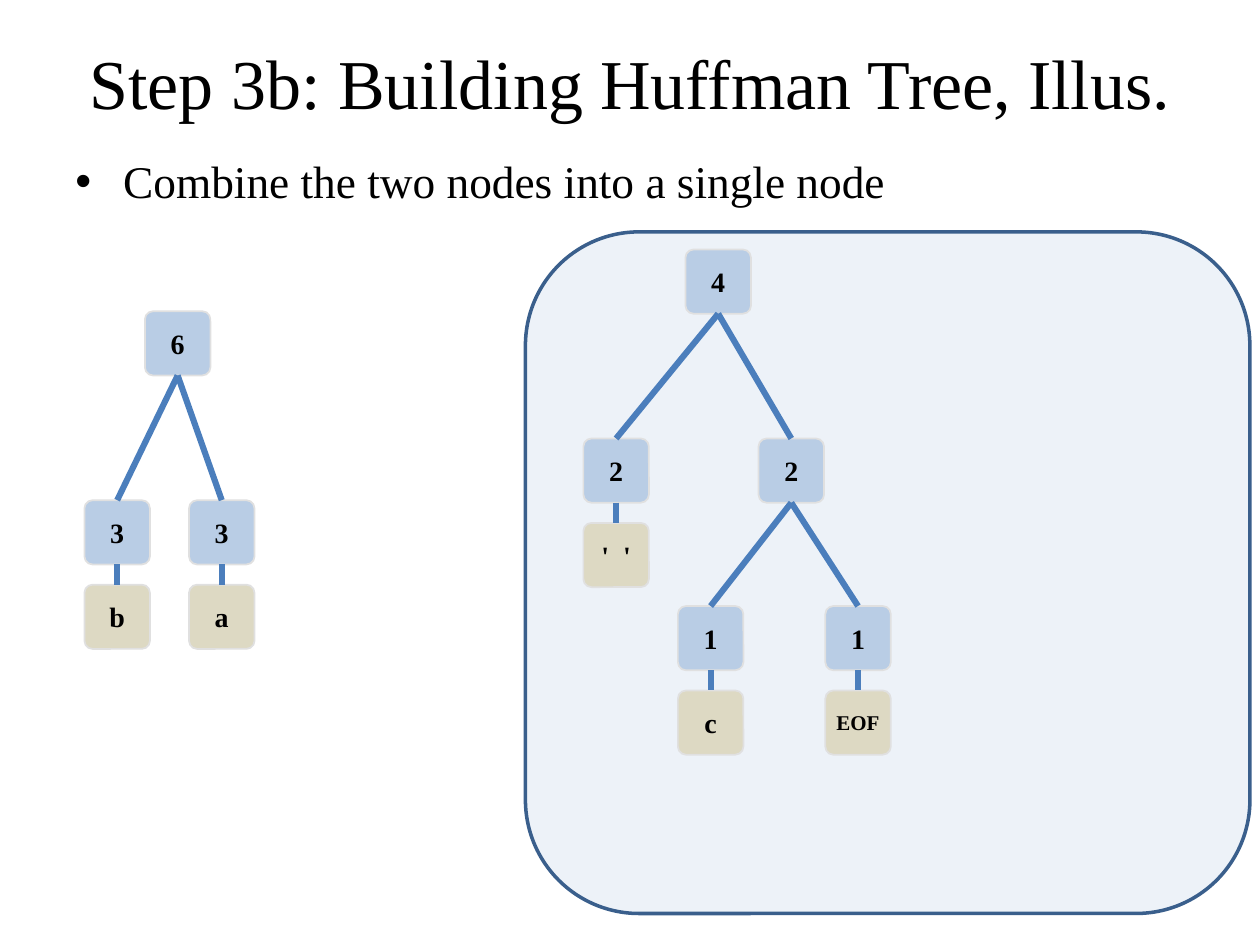
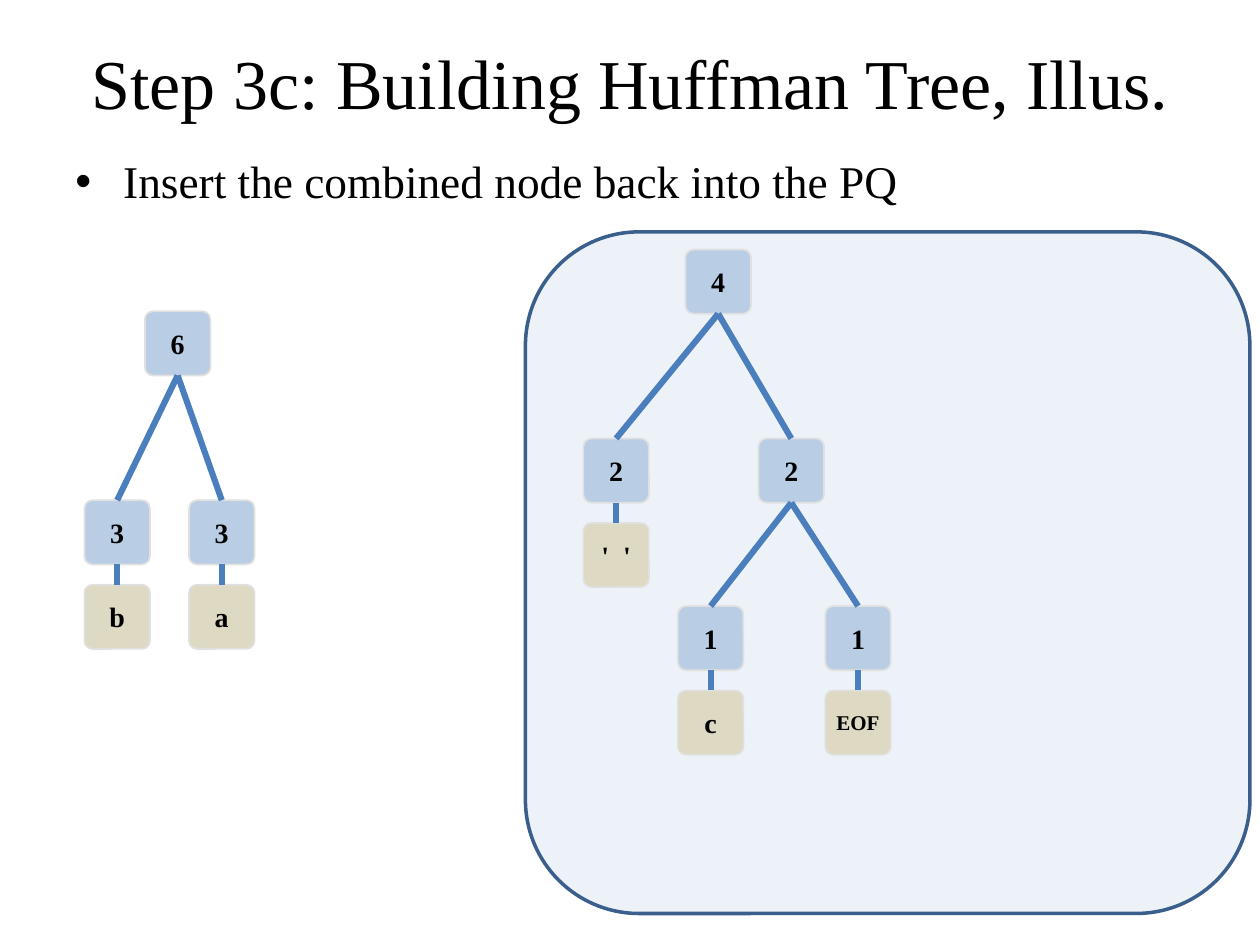
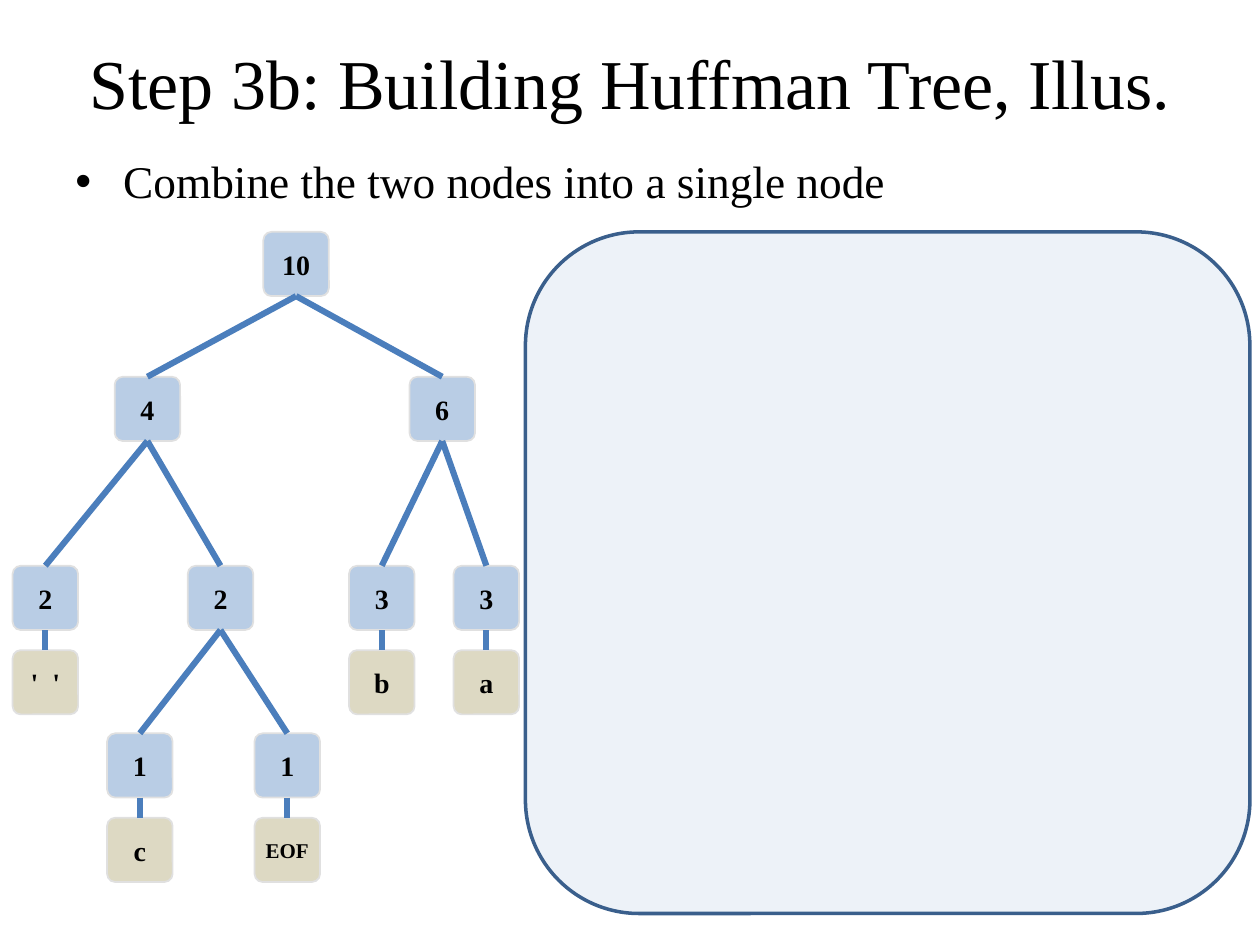
import pptx
import pptx.dml.color
import pptx.enum.shapes
import pptx.enum.text
import pptx.oxml.ns
import pptx.oxml.xmlchemy
import pptx.util

Inches = pptx.util.Inches
Pt = pptx.util.Pt
RGBColor = pptx.dml.color.RGBColor
MSO_SHAPE = pptx.enum.shapes.MSO_SHAPE
MSO_ANCHOR = pptx.enum.text.MSO_ANCHOR
PP_ALIGN = pptx.enum.text.PP_ALIGN
OxmlElement = pptx.oxml.xmlchemy.OxmlElement
qn = pptx.oxml.ns.qn

# Shared style
FONT = "Times New Roman"
BLACK = RGBColor(0x00, 0x00, 0x00)
PANEL_FILL = RGBColor(0x4F, 0x81, 0xBD)
PANEL_LINE = RGBColor(0x3A, 0x5F, 0x8C)
COUNT_FILL = RGBColor(0xB9, 0xCD, 0xE5)
SYMBOL_FILL = RGBColor(0xDD, 0xD9, 0xC3)
NODE_LINE = RGBColor(0xE0, 0xE0, 0xE0)
LINK_LINE = RGBColor(0x4B, 0x7E, 0xBC)

NODE_W, NODE_H = 0.52, 0.51
SYMBOL_DROP = 0.67
BOTTOM, TOP = 2, 0

# A tree is (count, symbol or list of (dx, dy, subtree)); offsets run from the parent
TREE_2 = ("2", [(-0.64, 1.33, ("1", "c")), (0.53, 1.33, ("1", "EOF"))])
TREE_4 = ("4", [(-0.81, 1.5, ("2", "'  '")), (0.58, 1.5, TREE_2)])
TREE_6 = ("6", [(-0.48, 1.5, ("3", "b")), (0.35, 1.5, ("3", "a"))])
TREE_10 = ("10", [(-1.18, 1.15, TREE_4), (1.16, 1.15, TREE_6)])

COMBINE = ("Step 3b: Building Huffman Tree, Illus.",
           "Combine the two nodes into a single node")
INSERT = ("Step 3c: Building Huffman Tree, Illus.",
          "Insert the combined node back into the PQ")
TWO_TREES = [(1.15, 2.47, TREE_6), (5.44, 1.98, TREE_4)]
SLIDES = [
    (COMBINE, TWO_TREES),
    (INSERT, TWO_TREES),
    (COMBINE, [(2.09, 1.84, TREE_10)]),
]


def write(tf, text, size=16, bold=False, align=PP_ALIGN.LEFT,
          anchor=MSO_ANCHOR.MIDDLE, wrap=True):
    tf.auto_size = pptx.enum.text.MSO_AUTO_SIZE.NONE
    tf.word_wrap = wrap
    tf.vertical_anchor = anchor
    p = tf.paragraphs[0]
    p.alignment = align
    r = p.add_run()
    r.text = text
    r.font.name = FONT
    r.font.size = Pt(size)
    r.font.bold = bold
    r.font.color.rgb = BLACK
    return p


def place(sp, x, y, w, h):
    sp.left, sp.top, sp.width, sp.height = map(Inches, (x, y, w, h))


def add_box(shapes, x, y, w, h, fill, line, weight):
    sp = shapes.add_shape(MSO_SHAPE.ROUNDED_RECTANGLE,
                          Inches(x), Inches(y), Inches(w), Inches(h))
    sp.shadow.inherit = False
    sp.fill.solid()
    sp.fill.fore_color.rgb = fill
    sp.line.color.rgb = line
    sp.line.width = Pt(weight)
    return sp


def add_title(slide, text):
    sp = slide.shapes.title
    place(sp, 0.5, 0.3, 9, 0.7)
    write(sp.text_frame, text, size=40, align=PP_ALIGN.CENTER)


def add_bullet(slide, text):
    sp = slide.shapes.add_textbox(Inches(0.5), Inches(1.17), Inches(9), Inches(0.5))
    p = write(sp.text_frame, text, size=25.9, anchor=MSO_ANCHOR.TOP)
    p.space_before = Pt(3)
    pPr = p._p.get_or_add_pPr()
    pPr.set("marL", str(Inches(0.38)))
    pPr.set("indent", str(-Inches(0.38)))
    for tag, key, value in (("a:buFont", "typeface", "Arial"), ("a:buChar", "char", "•")):
        bullet = OxmlElement(tag)
        bullet.set(key, value)
        pPr.append(bullet)


def add_queue_panel(slide):
    sp = add_box(slide.shapes, 4.17, 1.84, 5.75, 5.41, PANEL_FILL, PANEL_LINE, 2)
    alpha = OxmlElement("a:alpha")
    alpha.set("val", "10000")
    sp._element.spPr.find(qn("a:solidFill")).find(qn("a:srgbClr")).append(alpha)


def add_node(shapes, x, y, text, fill):
    sp = add_box(shapes, x, y, NODE_W, NODE_H, fill, NODE_LINE, 1)
    sp.adjustments[0] = 0.126
    write(sp.text_frame, text, size=12 if text == "EOF" else 16,
          bold=True, align=PP_ALIGN.CENTER, wrap=False)
    return sp


def add_link(shapes, parent, child):
    cxn = shapes.add_connector(
        pptx.enum.shapes.MSO_CONNECTOR.STRAIGHT,
        parent.left + parent.width // 2, parent.top + parent.height,
        child.left + child.width // 2, child.top)
    cxn.begin_connect(parent, BOTTOM)
    cxn.end_connect(child, TOP)
    cxn.line.color.rgb = LINK_LINE
    cxn.line.width = Pt(3.5)
    cxn._element.spPr.append(OxmlElement("a:effectLst"))


def add_tree(shapes, x, y, tree):
    count, below = tree
    root = add_node(shapes, x, y, count, COUNT_FILL)
    if isinstance(below, str):
        children = [add_node(shapes, x, y + SYMBOL_DROP, below, SYMBOL_FILL)]
    else:
        children = [add_tree(shapes, x + dx, y + dy, subtree) for dx, dy, subtree in below]
    for child in children:
        add_link(shapes, root, child)
    return root


def main():
    prs = pptx.Presentation()
    prs.slide_width, prs.slide_height = Inches(10), Inches(7.5)
    for (title, step), trees in SLIDES:
        slide = prs.slides.add_slide(prs.slide_layouts[5])
        add_queue_panel(slide)
        add_title(slide, title)
        add_bullet(slide, step)
        for x, y, tree in trees:
            add_tree(slide.shapes.add_group_shape().shapes, x, y, tree)
    prs.save("out.pptx")


if __name__ == "__main__":
    main()
